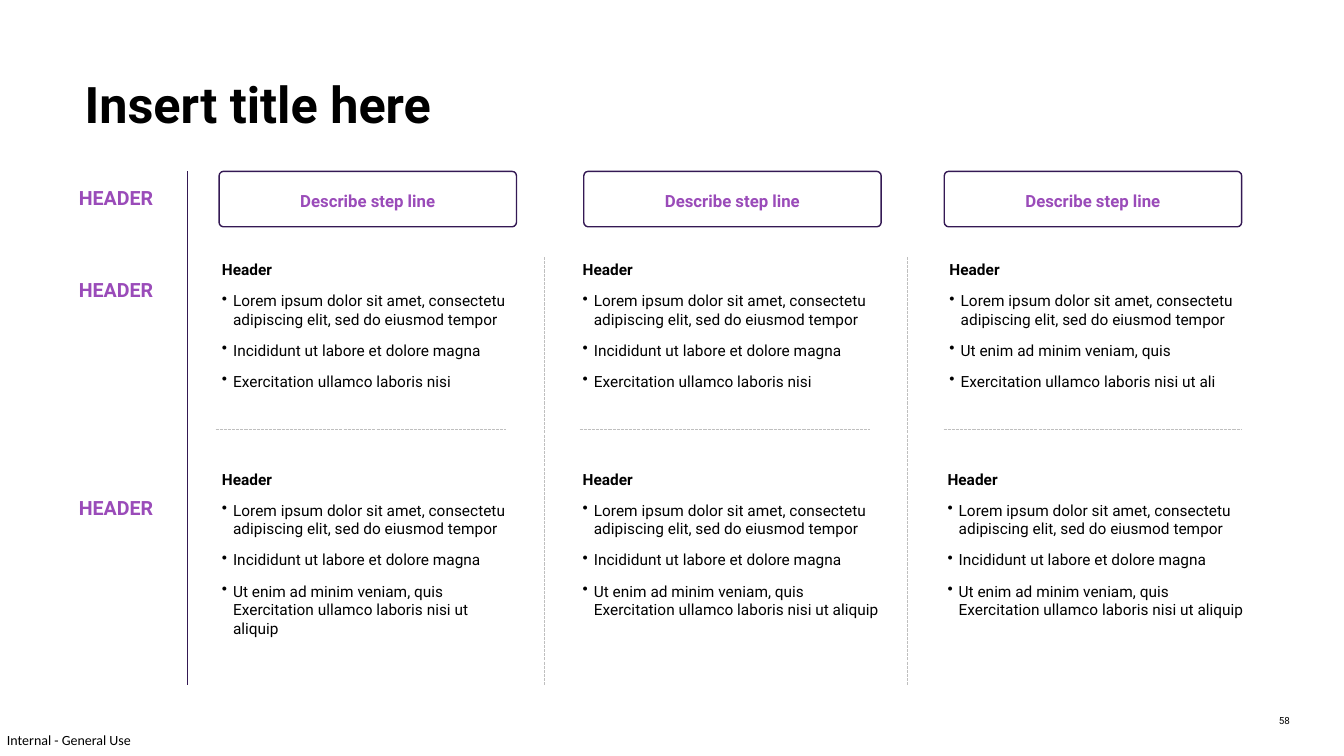
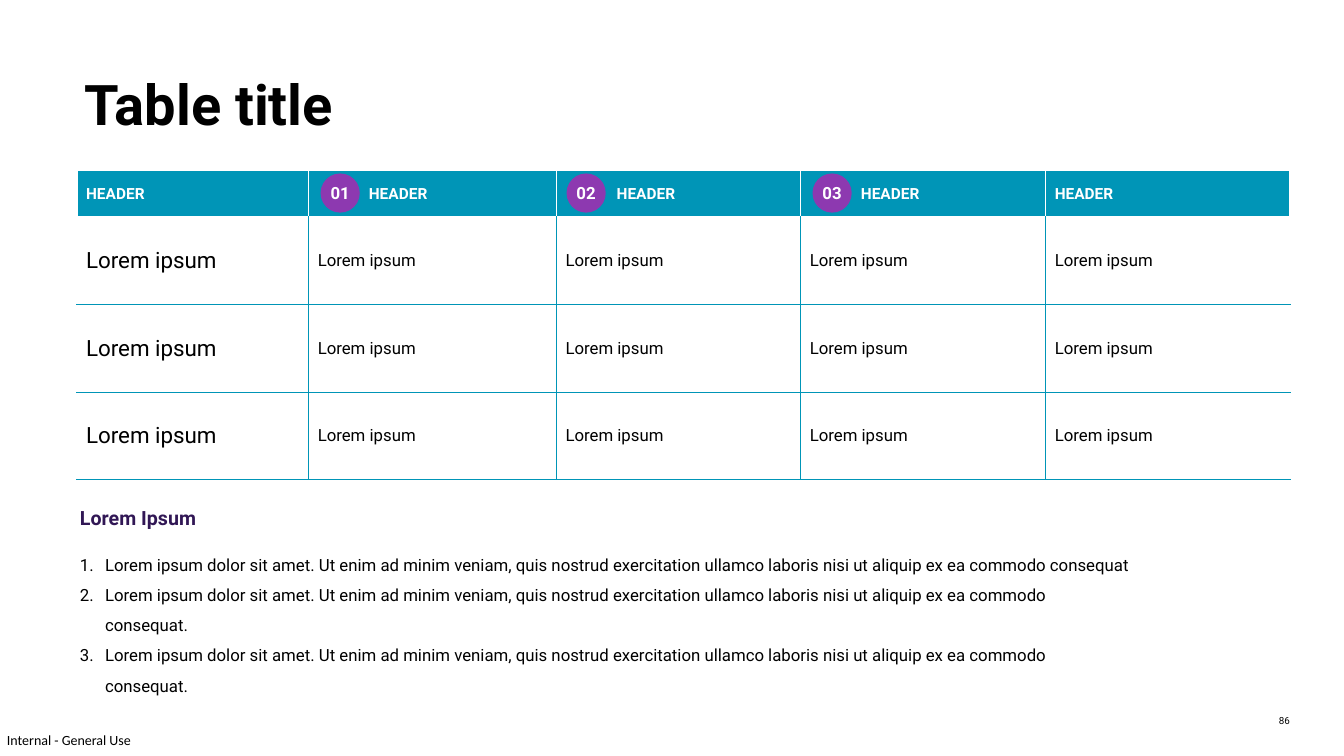
from lxml.etree import SubElement
from pptx import Presentation
from pptx.dml.color import RGBColor
from pptx.enum.dml import MSO_LINE
from pptx.enum.shapes import MSO_CONNECTOR, MSO_SHAPE
from pptx.enum.text import MSO_ANCHOR, MSO_AUTO_SIZE, PP_ALIGN
from pptx.oxml.ns import qn
from pptx.util import Pt

BLACK = RGBColor(0, 0, 0)
WHITE = RGBColor(0xFF, 0xFF, 0xFF)
PURPLE = RGBColor(0x9A, 0x4B, 0xB9)
BADGE = RGBColor(0x8D, 0x39, 0xB0)
NAVY = RGBColor(0x34, 0x19, 0x54)
INDIGO = RGBColor(0x31, 0x17, 0x55)
GRAY = RGBColor(0xBF, 0xBF, 0xBF)
TEAL = RGBColor(0, 0x95, 0xB7)
FONT = "Roboto"
FOOTER = "Internal - General Use"

LOREM = "Lorem ipsum dolor sit amet, consectetu adipiscing elit, sed do eiusmod tempor"
LABOR = "Incididunt ut labore et dolore magna"
SHORT = "Exercitation ullamco laboris nisi"
LONG = "Ut enim ad minim veniam, quis Exercitation ullamco laboris nisi ut aliquip"
LOWER = [LOREM, LABOR, LONG]
STEP = "Describe step line"
SIDES = [("HEADER", 136), ("HEADER", 201.6), ("HEADER", 357.8)]
STEPS = [
    {"box": 156.5, "rule": (154, 361.5),
     "cells": [(156.3, 217.4, [LOREM, LABOR, SHORT]), (156.3, 213, LOWER)]},
    {"box": 417, "rule": (414, 621.5),
     "cells": [(414, 217.4, [LOREM, LABOR, SHORT]), (414, 217.4, LOWER)]},
    {"box": 674.5, "rule": (674, 887),
     "cells": [(676, 212, [LOREM, "Ut enim ad minim veniam, quis",
                           "Exercitation ullamco laboris nisi ut ali"]),
               (674.6, 217.4, LOWER)]},
]
TOPS = [(183.6, 98.6), (333.4, 111.6)]

HEADS = ["HEADER"] * 5
ROWS = [HEADS] + [["Lorem ipsum"] * 5 for _ in range(3)]
WIDTHS = [165.5, 177, 174.5, 175, 174.5]
HEIGHTS = [33.2, 62.6, 62.6, 62.6]
BADGES = ["01", "02", "03"]
NOTE = ("Lorem ipsum dolor sit amet. Ut enim ad minim veniam, quis nostrud "
        "exercitation ullamco laboris nisi ut aliquip ex ea commodo consequat")
NOTES = [NOTE, NOTE + ".", NOTE + "."]


def write(para, text, size, color=BLACK, bold=False, font=FONT):
    run = para.add_run()
    run.text = text
    run.font.name = font
    run.font.size = Pt(size)
    run.font.bold = bold
    run.font.color.rgb = color


def pad(frame, *sides):
    left, top, right, base = sides if len(sides) == 4 else sides * 4
    frame.margin_left, frame.margin_top = Pt(left), Pt(top)
    frame.margin_right, frame.margin_bottom = Pt(right), Pt(base)


def frame(slide, x, y, w, h, inset=0):
    text = slide.shapes.add_textbox(Pt(x), Pt(y), Pt(w), Pt(h)).text_frame
    text.word_wrap = True
    pad(text, inset)
    return text


def bullet(para, indent, tag, **attrs):
    props = para._p.get_or_add_pPr()
    props.set("marL", str(Pt(indent)))
    props.set("indent", str(-Pt(indent)))
    SubElement(props, qn(tag), **attrs)


def line(slide, x1, y1, x2, y2, color=GRAY, width=0.75, dash=MSO_LINE.SQUARE_DOT):
    rule = slide.shapes.add_connector(
        MSO_CONNECTOR.STRAIGHT, Pt(x1), Pt(y1), Pt(x2), Pt(y2))
    rule.line.color.rgb = color
    rule.line.width = Pt(width)
    rule.line.dash_style = dash
    SubElement(rule._element.spPr, qn("a:effectLst"))


def label(slide, kind, x, y, w, h, text, color):
    shape = slide.shapes.add_shape(kind, Pt(x), Pt(y), Pt(w), Pt(h))
    shape.shadow.inherit = False
    body = shape.text_frame
    pad(body, 0)
    body.vertical_anchor = MSO_ANCHOR.MIDDLE
    para = body.paragraphs[0]
    para.alignment = PP_ALIGN.CENTER
    write(para, text, 12, color, True)
    return shape


def start(deck, title, size, page):
    slide = deck.slides.add_slide(deck.slide_layouts[5])
    head = slide.shapes.title
    head.left, head.top, head.width, head.height = Pt(53.3), Pt(24.5), Pt(854), Pt(104.4)
    body = head.text_frame
    body.auto_size = MSO_AUTO_SIZE.NONE
    body.vertical_anchor = MSO_ANCHOR.MIDDLE
    para = body.paragraphs[0]
    para.alignment = PP_ALIGN.LEFT
    para.line_spacing = 0.9
    write(para, title, size, bold=True)
    write(frame(slide, 5, 522.7, 95, 12).paragraphs[0], FOOTER, 10, font="Calibri")
    foot = frame(slide, 906.5, 507, 31.7, 18)
    pad(foot, 7.2, 3.6, 7.2, 3.6)
    write(foot.paragraphs[0], page, 7)
    return slide


def steps(deck):
    slide = start(deck, "Insert title here", 36, "58")
    for text, y in SIDES:
        para = frame(slide, 39, y, 70.5, 14.4).paragraphs[0]
        para.alignment = PP_ALIGN.RIGHT
        para.line_spacing = 0.8
        write(para, text, 14, PURPLE, True)
    line(slide, 134, 122.4, 134, 489.6, NAVY, 1, MSO_LINE.SOLID)
    for x in (388.8, 648):
        line(slide, x, 183.6, x, 489.6)
    for step in STEPS:
        box = label(slide, MSO_SHAPE.ROUNDED_RECTANGLE, step["box"], 122.4,
                    212.4, 39.6, STEP, PURPLE)
        pad(box.text_frame, 0, 2, 0, 0)
        box.adjustments[0] = 0.08
        box.fill.background()
        box.line.color.rgb = NAVY
        box.line.width = Pt(1)
        left, right = step["rule"]
        line(slide, left, 306.7, right, 306.7)
        for (x, w, items), (y, h) in zip(step["cells"], TOPS):
            body = frame(slide, x, y, w, h, 2.2)
            write(body.paragraphs[0], "Header", 11, bold=True)
            for item in items:
                para = body.add_paragraph()
                bullet(para, 8, "a:buChar", char="•")
                para.space_before = Pt(9)
                write(para, item, 11)


def border(cell, sides, color):
    props = cell._tc.get_or_add_tcPr()
    for side in sides:
        edge = SubElement(props, qn("a:ln" + side), w=str(Pt(1)))
        fill = SubElement(edge, qn("a:solidFill"))
        SubElement(fill, qn("a:srgbClr"), val=str(color))


def grid(slide):
    table = slide.shapes.add_table(
        len(ROWS), len(WIDTHS), Pt(55), Pt(121.8),
        Pt(sum(WIDTHS)), Pt(sum(HEIGHTS))).table
    table.first_row = table.horz_banding = False
    for col, width in zip(table.columns, WIDTHS):
        col.width = Pt(width)
    for row, height in zip(table.rows, HEIGHTS):
        row.height = Pt(height)
    last = len(WIDTHS) - 1
    for r, texts in enumerate(ROWS):
        for c, text in enumerate(texts):
            cell = table.cell(r, c)
            pad(cell, 6.5)
            cell.vertical_anchor = MSO_ANCHOR.MIDDLE
            sides = "L" * (c > 0) + "R" * (c < last) + "T" * (r > 1) + "B" * (r > 0)
            border(cell, sides, TEAL if r else WHITE)
            para = cell.text_frame.paragraphs[0]
            if r:
                cell.fill.background()
                write(para, text, 12 if c else 16)
            else:
                cell.fill.solid()
                cell.fill.fore_color.rgb = TEAL
                if 0 < c < last:
                    cell.margin_left = Pt(43)
                write(para, text, 11, WHITE, True)


def chart(deck):
    slide = start(deck, "Table title", 40, "86")
    grid(slide)
    for i, text in enumerate(BADGES):
        dot = label(slide, MSO_SHAPE.OVAL, 229 + 175.7 * i, 123.9, 28, 28, text, WHITE)
        dot.text_frame.word_wrap = False
        dot.fill.solid()
        dot.fill.fore_color.rgb = BADGE
        dot.line.fill.background()
    write(frame(slide, 53.5, 358, 157.7, 24.5, 3.6).paragraphs[0],
          "Lorem Ipsum", 14, INDIGO, True)
    body = frame(slide, 53.5, 385.2, 760.3, 93, 3.6)
    for i, text in enumerate(NOTES):
        para = body.add_paragraph() if i else body.paragraphs[0]
        bullet(para, 18, "a:buAutoNum", type="arabicPeriod")
        para.line_spacing = 1.5
        write(para, text, 12)


def main():
    deck = Presentation()
    deck.slide_width, deck.slide_height = Pt(960), Pt(540)
    steps(deck)
    chart(deck)
    deck.save("out.pptx")


if __name__ == "__main__":
    main()
